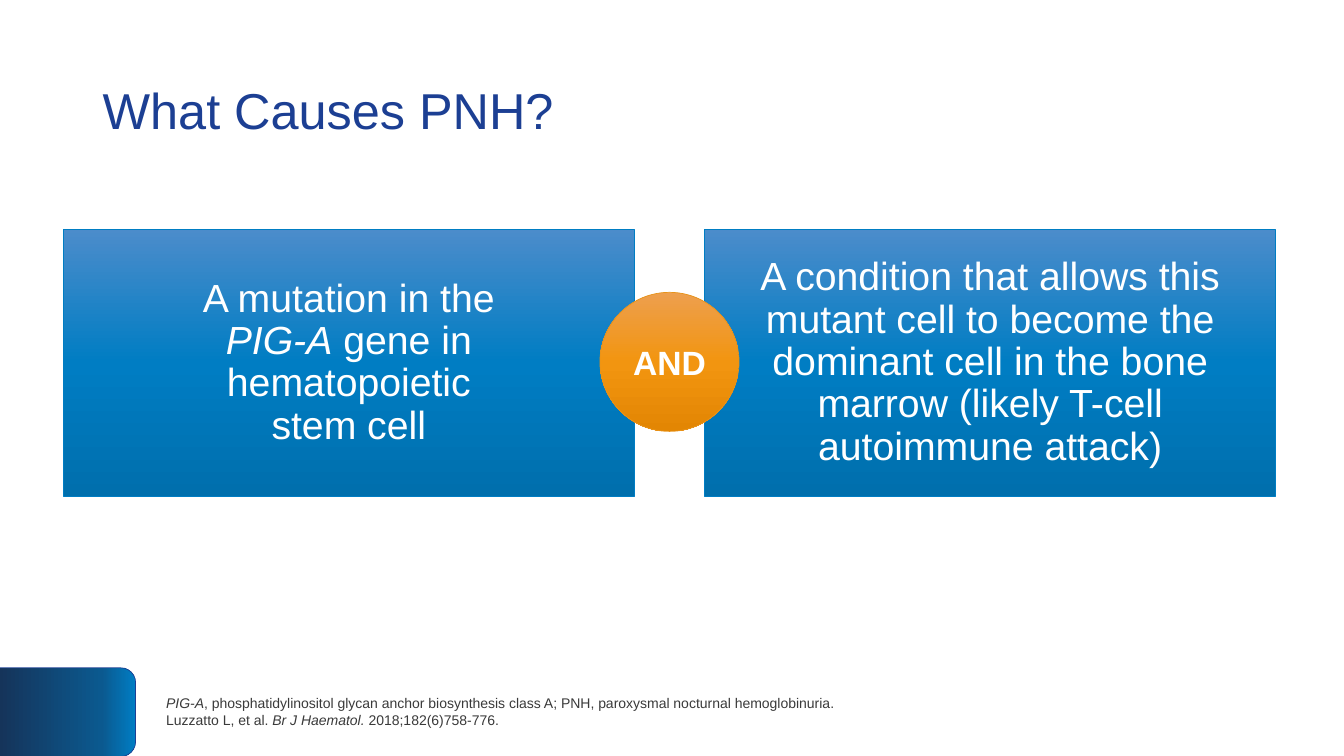
from copy import deepcopy
from dataclasses import dataclass

from lxml import etree
from pptx import Presentation
from pptx.dml.color import RGBColor
from pptx.enum.shapes import MSO_SHAPE as Shape
from pptx.enum.text import MSO_ANCHOR as Anchor, PP_ALIGN as Align
from pptx.oxml.ns import qn
from pptx.util import Emu, Pt

PX = 9144  # 100 px to the inch


@dataclass(frozen=True)
class Theme:
    font: str = "Arial"
    navy: str = "1C3F93"
    blue: str = "007DC3"
    amber: str = "E8931A"
    white: str = "FFFFFF"
    grey: str = "3A3A3A"
    title: int = 36
    body: int = 28
    badge: int = 24
    note: int = 10
    edge: float = 0.5
    tab_fade: tuple = ((0, "007DC3"), (25, "0B598F"), (100, "15345A"))
    box_fade: tuple = ((0, "4B8CCB"), (50, "007DC3"), (100, "006FAD"))
    and_fade: tuple = ((0, "ED9F4E"), (50, "F29510"), (100, "E38603"))


class Deck:
    def __init__(self, theme, width, height):
        self.theme = theme
        self.prs = Presentation()
        self.prs.slide_width, self.prs.slide_height = Emu(width * PX), Emu(height * PX)
        self.slide = self.prs.slides.add_slide(self.prs.slide_layouts[6])

    def shape(self, kind, area, fade, edge, turn=0):
        item = self.slide.shapes.add_shape(kind, *(Emu(v * PX) for v in area))
        item.shadow.inherit = False
        item.rotation = turn
        item.line.color.rgb = RGBColor.from_string(edge)
        item.line.width = Pt(self.theme.edge)
        self.fade(item, fade)
        return item

    def fade(self, item, stops):
        """Fill a shape with a gradient that runs from its top to its bottom."""
        item.fill.gradient()
        grad = item._element.spPr.find(qn("a:gradFill"))
        for child in list(grad):
            grad.remove(child)
        row = etree.SubElement(grad, qn("a:gsLst"))
        for place, color in stops:
            stop = etree.SubElement(row, qn("a:gs"), pos=str(place * 1000))
            etree.SubElement(stop, qn("a:srgbClr"), val=color)
        etree.SubElement(grad, qn("a:lin"), ang="5400000", scaled="0")

    def text(self, area, words, size, color, spacing=1.0):
        item = self.slide.shapes.add_textbox(*(Emu(v * PX) for v in area))
        self.label(item, words, size, color, Align.LEFT, spacing)

    def label(self, item, words, size, color, align=Align.CENTER,
              spacing=1.0, bold=False, inset=10):
        """Set one paragraph; asterisks enclose italics, newlines break lines."""
        frame = item.text_frame
        frame.word_wrap = True
        frame.vertical_anchor = Anchor.MIDDLE
        frame.margin_left = frame.margin_right = Emu(inset * PX)
        para = frame.paragraphs[0]
        para.alignment, para.line_spacing = align, spacing
        for part, chunk in enumerate(words.split("*")):
            for row, line in enumerate(chunk.split("\n")):
                if row:
                    para.add_line_break()
                if line:
                    run = para.add_run()
                    run.text = line
                    font = run.font
                    font.name, font.size = self.theme.font, Pt(size)
                    font.bold, font.italic = bold, part % 2 == 1
                    font.color.rgb = RGBColor.from_string(color)
        for gap in para._p.findall(qn("a:br")):
            gap.append(deepcopy(para.runs[-1]._r.rPr))

    def save(self):
        self.prs.save("out.pptx")


def main():
    look = Theme()
    deck = Deck(look, 1333, 750)
    deck.shape(Shape.ROUND_2_SAME_RECTANGLE, (23, 639, 88, 135),
               look.tab_fade, look.navy, turn=90)
    deck.text((92, 40, 1150, 145), "What Causes PNH?", look.title, look.navy, 0.9)

    causes = (
        "A mutation in the\n*PIG-A* gene in\nhematopoietic\nstem cell",
        "A condition that allows this mutant cell to become the dominant cell "
        "in the bone marrow (likely T-cell autoimmune attack)",
    )
    for col, cause in enumerate(causes):
        box = deck.shape(Shape.RECTANGLE, (63 + col * 636, 228, 566, 264),
                         look.box_fade, look.blue)
        deck.label(box, cause, look.body, look.white, spacing=0.9, inset=20)

    deck.text((155, 662, 1165, 88),
              "*PIG-A*, phosphatidylinositol glycan anchor biosynthesis class A; "
              "PNH, paroxysmal nocturnal hemoglobinuria.\n"
              "Luzzatto L, et al. *Br J Haematol.* 2018;182(6)758-776.",
              look.note, look.grey)
    badge = deck.shape(Shape.OVAL, (595, 290, 138, 138), look.and_fade, look.amber)
    deck.label(badge, "AND", look.badge, look.white, bold=True)
    deck.save()


if __name__ == "__main__":
    main()
